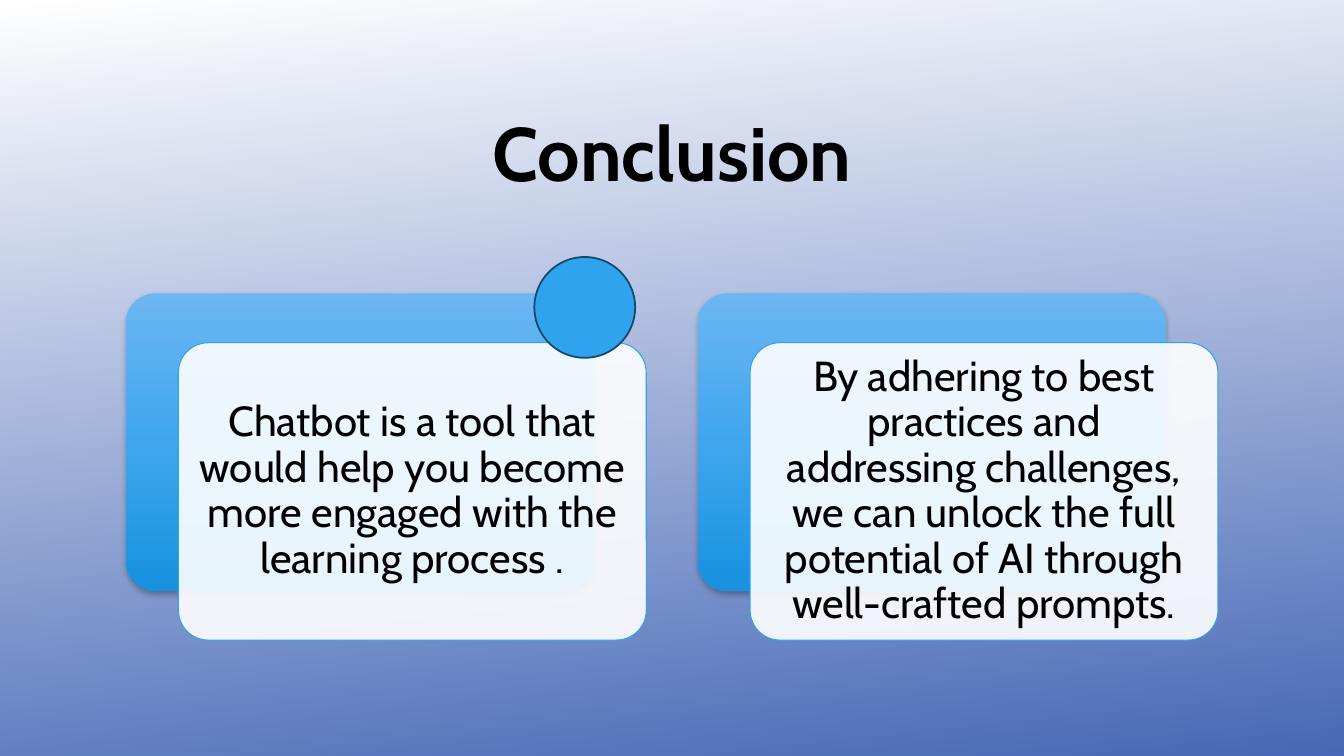
import copy

import lxml.etree
import pptx
import pptx.dml.color
import pptx.enum.shapes
import pptx.enum.text
import pptx.oxml.ns
import pptx.util

Inches = pptx.util.Inches
Pt = pptx.util.Pt
SHAPES = pptx.enum.shapes.MSO_SHAPE
qn = pptx.oxml.ns.qn

CARD_WIDTH, CARD_HEIGHT = 4.64, 2.95
CARD_LEFT, CARD_TOP, CARD_PITCH = 1.25, 2.91, 5.67
PANEL_SHIFT = (0.52, 0.49)
TEXT_INSET = 0.09
CONCLUSIONS = [
    "Chatbot is a tool that would help you become more engaged with the learning process .",
    "By adhering to best practices and addressing challenges, we can unlock the full "
    "potential of AI through well-crafted prompts.",
]


def color(hex_value):
    """Turn a hex string into a colour."""
    return pptx.dml.color.RGBColor.from_string(hex_value)


def apply(target, values):
    """Set every attribute in values on target."""
    for name, value in values.items():
        setattr(target, name, value)


def paint_gradient(fill, element, stops, angle):
    """Fill with (position, hex) stops at a clockwise angle."""
    fill.gradient()
    fill.gradient_angle = 360 - angle
    stop_list = element.find(".//" + qn("a:gsLst"))
    while len(stop_list) < len(stops):
        stop_list.append(copy.deepcopy(stop_list[-1]))
    for stop, (position, hex_value) in zip(fill.gradient_stops, stops):
        stop.position = position
        stop.color.rgb = color(hex_value)


def add_soft_shadow(shape):
    """Put a faint shadow just below the shape."""
    effects = shape.element.spPr.find(qn("a:effectLst"))
    shadow = lxml.etree.SubElement(
        effects, qn("a:outerShdw"), blurRad=str(Pt(4)), dist=str(Pt(2)),
        dir="5400000", algn="ctr", rotWithShape="0")
    black = lxml.etree.SubElement(shadow, qn("a:srgbClr"), val="000000")
    lxml.etree.SubElement(black, qn("a:alpha"), val="28000")


def add_plain_shape(slide, kind, box):
    """Add a preset shape without a theme shadow."""
    shape = slide.shapes.add_shape(kind, *map(Inches, box))
    shape.shadow.inherit = False
    return shape


def outline(shape, hex_value, width):
    """Draw the outline of a shape."""
    shape.line.color.rgb = color(hex_value)
    shape.line.width = Pt(width)


def write(frame, words, size, bold, inset):
    """Write one centred paragraph in a text frame."""
    apply(frame, {
        "text": words,
        "word_wrap": True,
        "auto_size": pptx.enum.text.MSO_AUTO_SIZE.NONE,
        "vertical_anchor": pptx.enum.text.MSO_ANCHOR.MIDDLE,
        "margin_left": Inches(inset),
        "margin_right": Inches(inset),
        "margin_top": Inches(inset),
        "margin_bottom": Inches(inset),
    })
    paragraph = frame.paragraphs[0]
    apply(paragraph, {"alignment": pptx.enum.text.PP_ALIGN.CENTER, "line_spacing": 0.9})
    font = paragraph.runs[0].font
    apply(font, {"name": "Cabin", "size": Pt(size), "bold": bold})
    font.color.rgb = color("000000")


def add_heading(slide, box):
    """Place the slide title in its box."""
    title = slide.shapes.title
    apply(title, dict(zip(("left", "top", "width", "height"), map(Inches, box))))
    write(title.text_frame, "Conclusion", 54, True, 0.1)


def add_card(slide, box, conclusion):
    """Stack a blue backing, a pale panel and its text from the given box."""
    left, top, width, height = box
    backing = add_plain_shape(slide, SHAPES.ROUNDED_RECTANGLE, box)
    backing.adjustments[0] = 0.1
    paint_gradient(backing.fill, backing.element,
                   [(0, "6CB6F1"), (0.5, "3FA6EE"), (1, "1891DF")], 90)
    backing.line.fill.background()
    add_soft_shadow(backing)

    left, top = left + PANEL_SHIFT[0], top + PANEL_SHIFT[1]
    panel = add_plain_shape(slide, SHAPES.ROUNDED_RECTANGLE, (left, top, width, height))
    panel.adjustments[0] = 0.1
    panel.fill.solid()
    panel.fill.fore_color.rgb = color("FFFFFF")
    white = panel.element.spPr.find(qn("a:solidFill")).find(qn("a:srgbClr"))
    lxml.etree.SubElement(white, qn("a:alpha"), val="90000")
    outline(panel, "2FA3EE", 0.75)

    message = slide.shapes.add_textbox(
        Inches(left + TEXT_INSET), Inches(top + TEXT_INSET),
        Inches(width - 2 * TEXT_INSET), Inches(height - 2 * TEXT_INSET))
    write(message.text_frame, conclusion, 30, False, 0.12)


def add_dot(slide, box):
    """Place the blue circle over the corner of the first card."""
    dot = add_plain_shape(slide, SHAPES.OVAL, box)
    dot.fill.solid()
    dot.fill.fore_color.rgb = color("2FA3EE")
    outline(dot, "154768", 1.25)


def main():
    """Build and save the conclusion slide."""
    deck = pptx.Presentation()
    apply(deck, {"slide_width": Inches(13.33), "slide_height": Inches(7.5)})
    slide = deck.slides.add_slide(deck.slide_layouts[5])
    paint_gradient(slide.background.fill, slide.element,
                   [(0, "FFFFFF"), (1, "4768B6")], 84)
    add_heading(slide, (1, 0.68, 11.33, 1.75))
    for index, conclusion in enumerate(CONCLUSIONS):
        left = CARD_LEFT + index * CARD_PITCH
        add_card(slide, (left, CARD_TOP, CARD_WIDTH, CARD_HEIGHT), conclusion)
    add_dot(slide, (5.3, 2.55, 1, 1))
    deck.save("out.pptx")


if __name__ == "__main__":
    main()
